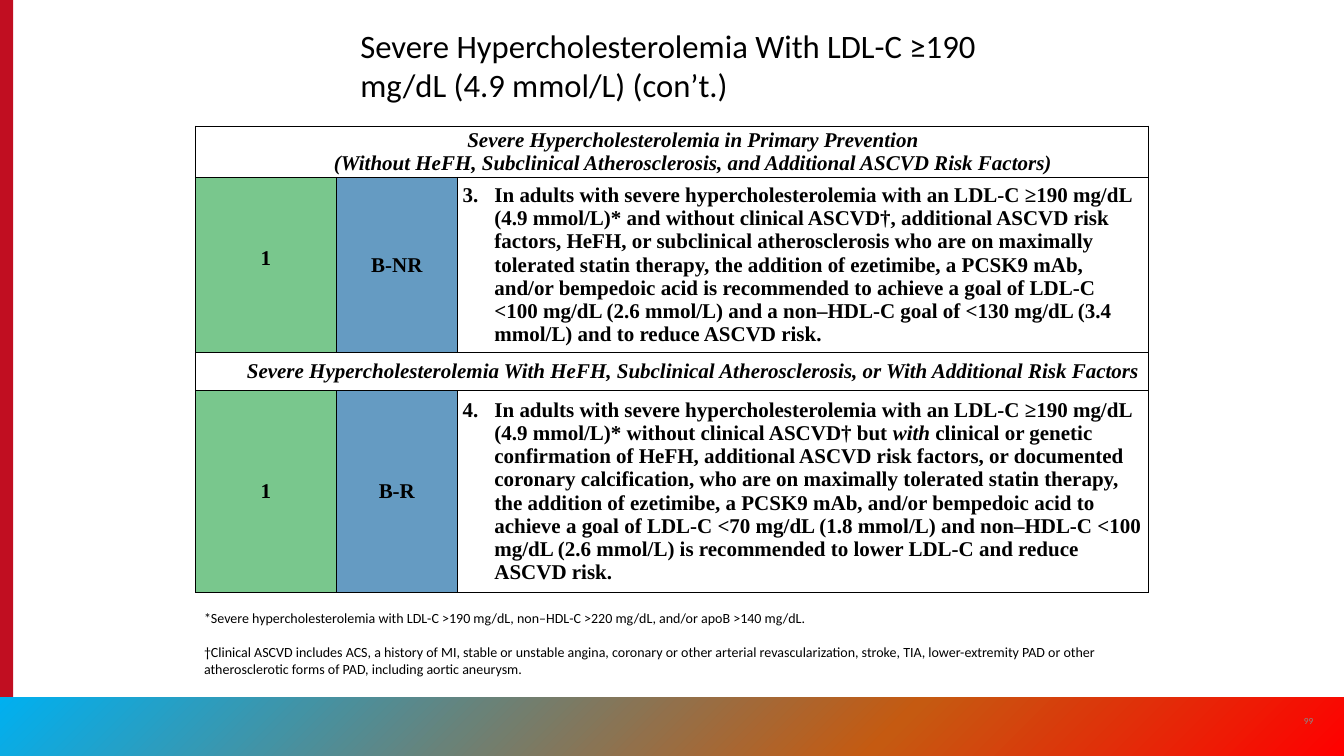
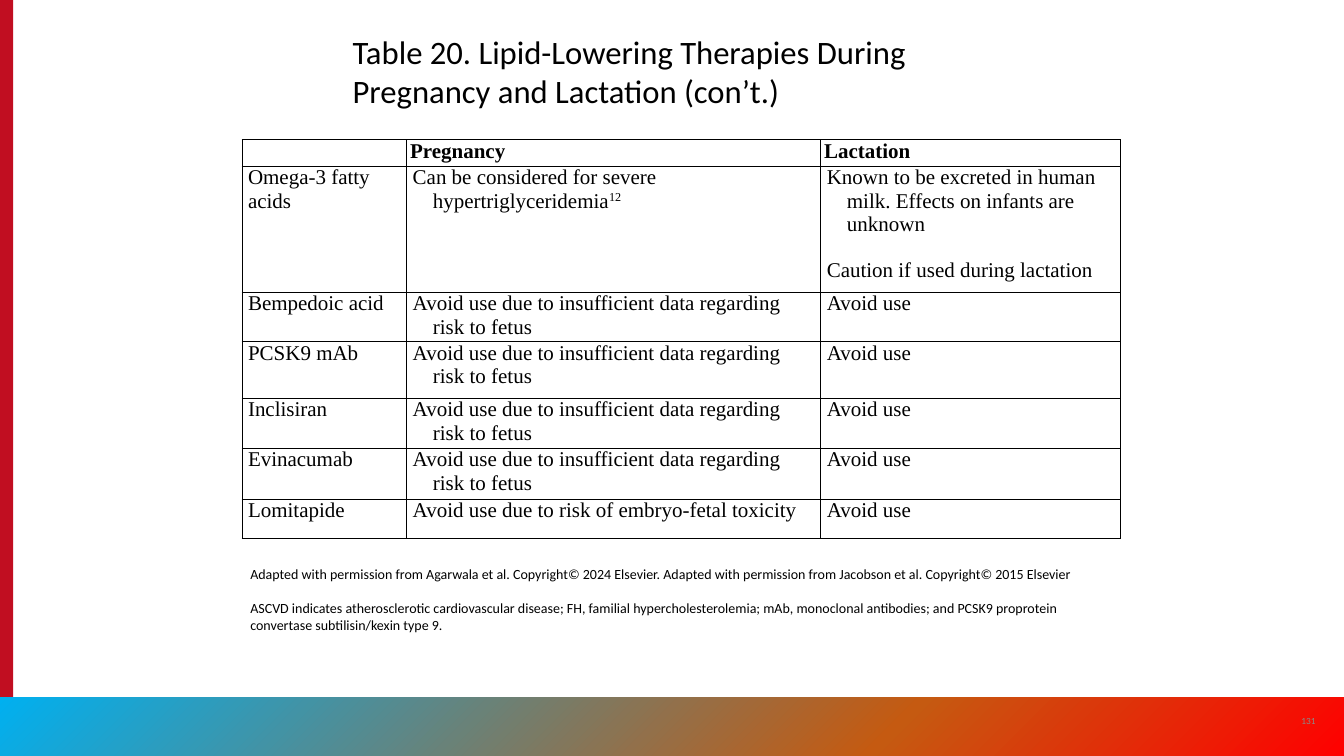
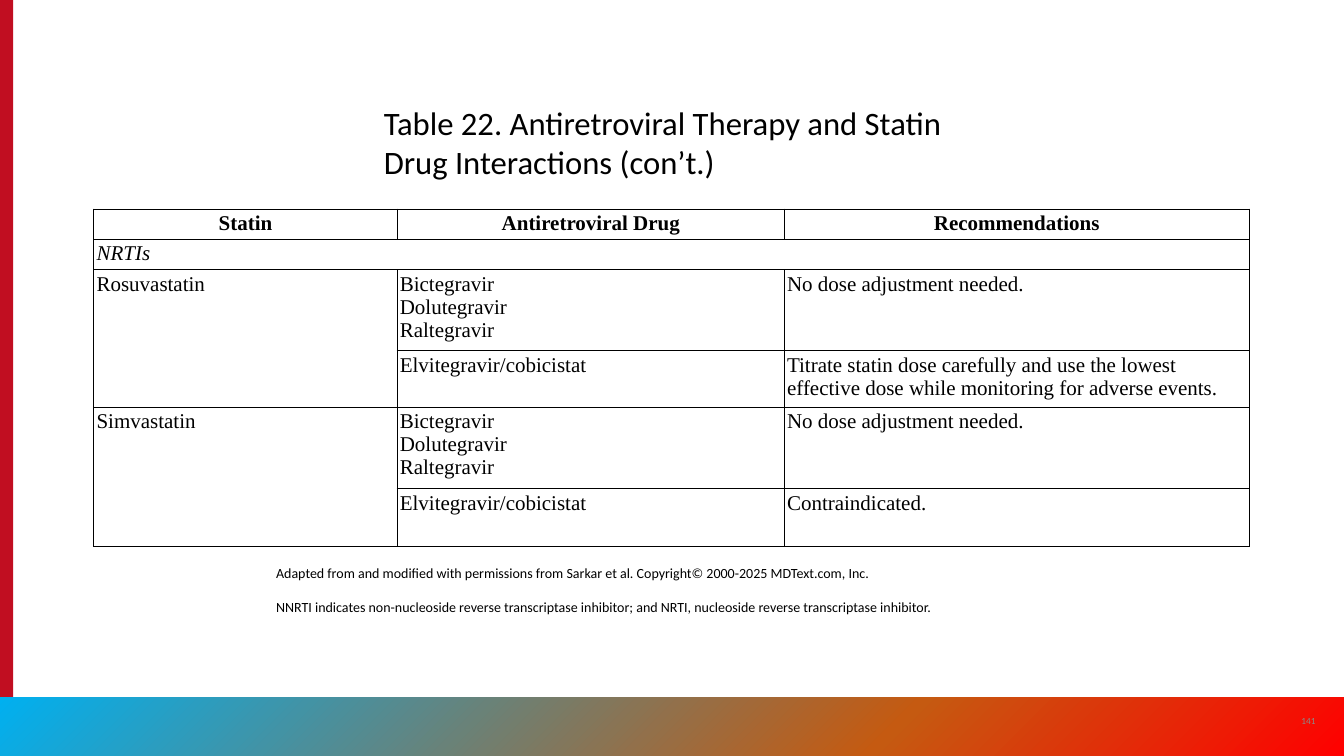
from copy import deepcopy

from pptx import Presentation
from pptx.dml.color import RGBColor
from pptx.enum.shapes import MSO_SHAPE, PP_PLACEHOLDER
from pptx.enum.text import MSO_ANCHOR, MSO_AUTO_SIZE, PP_ALIGN
from pptx.oxml import parse_xml
from pptx.oxml.ns import nsdecls, qn
from pptx.util import Cm, Pt

COLORS = {
    "bar": "C10E21", "blue": "00B0F0", "orange": "C55A11", "red": "FF0000",
    "text": "000000", "number": "8A8B8A", "white": "FFFFFF",
    "strength": "79C78D", "evidence": "659BC2",
}
RGB = {name: RGBColor.from_string(value) for name, value in COLORS.items()}
HANGING = Cm(0.61)

prs = Presentation()
prs.slide_width, prs.slide_height = Cm(40.64), Cm(22.86)
layout = prs.slide_layouts[5]
for ph in list(layout.placeholders):
    if ph.placeholder_format.type != PP_PLACEHOLDER.TITLE:
        ph.element.getparent().remove(ph.element)


def add_page(title, title_box, notes, notes_box, number):
    """Add a slide with its title, footnotes and page number."""
    s = prs.slides.add_slide(layout)
    head = s.shapes.title
    head.left, head.top, head.width, head.height = map(Cm, title_box)
    foot = s.shapes.add_textbox(*map(Cm, notes_box))
    num = s.shapes.add_textbox(Cm(38.96), Cm(21.18), Cm(1.22), Cm(1.22))
    for sp, text, size, color in (
        (head, title, 28, "text"),
        (foot, "\n".join(notes), 12, "text"),
        (num, number, 8, "number"),
    ):
        tf = sp.text_frame
        tf.text = text
        tf.word_wrap = True
        tf.auto_size = MSO_AUTO_SIZE.NONE
        tf.vertical_anchor = MSO_ANCHOR.TOP
        for i, p in enumerate(tf.paragraphs):
            p.alignment = PP_ALIGN.LEFT
            if i:
                p.space_before = Pt(14.6)
            p.font.name, p.font.size = "Calibri", Pt(size)
            p.font.color.rgb = RGB[color]
    num.text_frame.vertical_anchor = MSO_ANCHOR.MIDDLE
    num.text_frame.paragraphs[0].alignment = PP_ALIGN.CENTER
    return s


def add_grid(s, left, top, cols, rows, texts, side, edge=0):
    """Add a black-ruled table; side and edge are cell margins in cm."""
    frame = s.shapes.add_table(len(rows), len(cols), Cm(left), Cm(top),
                               Cm(sum(cols)), Cm(sum(rows)))
    table = frame.table
    table.first_row = table.horz_banding = False
    for col, width in zip(table.columns, cols):
        col.width = Cm(width)
    for row, height, line in zip(table.rows, rows, texts):
        row.height = Cm(height)
        for cell, text in zip(row.cells, line):
            cell.text_frame.text = text
            cell.margin_left = cell.margin_right = Cm(side)
            cell.margin_top = cell.margin_bottom = Cm(edge)
            tcPr = cell._tc.get_or_add_tcPr()
            for tag in ("lnL", "lnR", "lnT", "lnB"):
                tcPr.append(parse_xml(
                    f'<a:{tag} {nsdecls("a")} w="12700"><a:solidFill>'
                    f'<a:srgbClr val="{COLORS["text"]}"/></a:solidFill></a:{tag}>'))
            cell.fill.solid()
            cell.fill.fore_color.rgb = RGB["white"]
            for p in cell.text_frame.paragraphs:
                p.font.name, p.font.size = "Times New Roman", Pt(18)
                p.font.bold = p.font.italic = False
                p.font.color.rgb = RGB["text"]
    return table


# Slide 1: recommendations
s = add_page(
    "Severe Hypercholesterolemia With LDL-C ≥190 mg/dL (4.9 mmol/L) (con’t.)",
    (10.64, 0.64, 19.33, 2.64),
    ["*Severe hypercholesterolemia with LDL-C >190 mg/dL, non–HDL-C >220 mg/dL, "
     "and/or apoB >140 mg/dL.",
     "†Clinical ASCVD includes ACS, a history of MI, stable or unstable angina, "
     "coronary or other arterial revascularization, stroke, TIA, lower-extremity "
     "PAD or other atherosclerotic forms of PAD, including aortic aneurysm."],
    (5.92, 18.31, 28.68, 2.31), "99")

# Bar and band, moved to the layout so that every slide shows them
bar = s.shapes.add_shape(MSO_SHAPE.RECTANGLE, 0, 0, Cm(0.4), prs.slide_height)
bar.fill.solid()
bar.fill.fore_color.rgb = RGB["bar"]
band = s.shapes.add_shape(MSO_SHAPE.RECTANGLE, 0, Cm(21.08),
                          prs.slide_width, Cm(1.78))
band.fill.gradient()
band.fill.gradient_angle = 315
stops = band.element.spPr.find(".//" + qn("a:gsLst"))
stops.insert(1, deepcopy(stops[0]))
for stop, (pos, color) in zip(band.fill.gradient_stops,
                              ((0, "blue"), (0.66, "orange"), (1, "red"))):
    stop.position = pos
    stop.color.rgb = RGB[color]
for sp in (bar, band):
    sp.line.fill.background()
    sp.shadow.inherit = False
    layout.shapes.element.append(sp.element)

table = add_grid(s, 5.92, 3.81, [4.24, 3.68, 20.88], [1.55, 5.31, 1.14, 6.1], [
    ["Severe Hypercholesterolemia in Primary Prevention\n(Without HeFH, "
     "Subclinical Atherosclerosis, and Additional ASCVD Risk Factors)", "", ""],
    ["1", "B-NR",
     "In adults with severe hypercholesterolemia with an LDL-C ≥190 mg/dL "
     "(4.9 mmol/L)* and without clinical ASCVD†, additional ASCVD risk factors, "
     "HeFH, or subclinical atherosclerosis who are on maximally tolerated statin "
     "therapy, the addition of ezetimibe, a PCSK9 mAb, and/or bempedoic acid is "
     "recommended to achieve a goal of LDL-C <100 mg/dL (2.6 mmol/L) and a "
     "non–HDL-C goal of <130 mg/dL (3.4 mmol/L) and to reduce ASCVD risk."],
    ["Severe Hypercholesterolemia With HeFH, Subclinical Atherosclerosis, "
     "or With Additional Risk Factors", "", ""],
    ["1", "B-R",
     "In adults with severe hypercholesterolemia with an LDL-C ≥190 mg/dL "
     "(4.9 mmol/L)* without clinical ASCVD† but "],
], side=0.15)
for cell in table.iter_cells():
    cell.vertical_anchor = MSO_ANCHOR.MIDDLE
    for p in cell.text_frame.paragraphs:
        p.font.bold = True
        p.alignment = PP_ALIGN.CENTER
for row in (0, 2):
    table.cell(row, 0).merge(table.cell(row, 2))
    for p in table.cell(row, 0).text_frame.paragraphs:
        p.font.italic = True
        p._p.get_or_add_pPr().set("marL", str(Cm(1.27)))
for row, start in ((1, 3), (3, 4)):
    for col, color in enumerate(("strength", "evidence")):
        table.cell(row, col).fill.fore_color.rgb = RGB[color]
    p = table.cell(row, 2).text_frame.paragraphs[0]
    p.alignment = PP_ALIGN.LEFT
    pPr = p._p.get_or_add_pPr()
    pPr.set("marL", str(Cm(0.96)))
    pPr.set("indent", str(-Cm(0.96)))
    pPr.insert(0, parse_xml(f'<a:buAutoNum {nsdecls("a")} type="arabicPeriod" '
                            f'startAt="{start}"/>'))
table.cell(1, 0).margin_bottom = Cm(0.4)
r = p.add_run()
r.text = "with"
r.font.italic = True
p.add_run().text = (
    " clinical or genetic confirmation of HeFH, additional ASCVD risk factors, or "
    "documented coronary calcification, who are on maximally tolerated statin "
    "therapy, the addition of ezetimibe, a PCSK9 mAb, and/or bempedoic acid to "
    "achieve a goal of LDL-C <70 mg/dL (1.8 mmol/L) and non–HDL-C <100 mg/dL "
    "(2.6 mmol/L) is recommended to lower LDL-C and reduce ASCVD risk.")

# Slide 2: pregnancy and lactation
s = add_page(
    "Table 20. Lipid-Lowering Therapies During Pregnancy and Lactation (con’t.)",
    (10.41, 0.84, 19.81, 2.64),
    ["Adapted with permission from Agarwala et al. Copyright© 2024 Elsevier. "
     "Adapted with permission from Jacobson et al. Copyright© 2015 Elsevier",
     "ASCVD indicates atherosclerotic cardiovascular disease; FH, familial "
     "hypercholesterolemia; mAb, monoclonal antibodies; and PCSK9 proprotein "
     "convertase subtilisin/kexin type 9."],
    (7.32, 16.99, 26.57, 2.82), "131")
no_data = "Avoid use due to insufficient data regarding risk to fetus"
table = add_grid(
    s, 7.32, 4.22, [4.98, 12.52, 9.07],
    [0.8, 3.81, 1.51, 1.7, 1.51, 1.54, 1.18], [
        ["", "Pregnancy", "Lactation"],
        ["Omega-3 fatty acids",
         "Can be considered for severe hypertriglyceridemia",
         "Known to be excreted in human milk. Effects on infants are unknown\n"
         "Caution if used during lactation"],
        *([drug, no_data, "Avoid use"] for drug in
          ("Bempedoic acid", "PCSK9 mAb", "Inclisiran", "Evinacumab")),
        ["Lomitapide", "Avoid use due to risk of embryo-fetal toxicity",
         "Avoid use"],
    ], side=0.18)
for row in table.rows:
    for cell in list(row.cells)[1:]:
        for p in cell.text_frame.paragraphs:
            pPr = p._p.get_or_add_pPr()
            pPr.set("marL", str(HANGING))
            pPr.set("indent", str(-HANGING))
for cell in table.rows[0].cells:
    cell.margin_left = cell.margin_right = Cm(0.1)
    cell.text_frame.paragraphs[0].font.bold = True
table.cell(1, 2).text_frame.paragraphs[1].space_before = Pt(20)
r = table.cell(1, 1).text_frame.paragraphs[0].add_run()
r.text = "12"
r._r.get_or_add_rPr().set("baseline", "30000")

# Slide 3: antiretroviral interactions
s = add_page(
    "Table 22. Antiretroviral Therapy and Statin Drug Interactions (con’t.)",
    (11.35, 2.97, 17.96, 2.64),
    ["Adapted from and modified with permissions from Sarkar et al. "
     "Copyright© 2000-2025 MDText.com, Inc.",
     "NNRTI indicates non-nucleoside reverse transcriptase inhibitor; and NRTI, "
     "nucleoside reverse transcriptase inhibitor."],
    (8.1, 16.94, 24.43, 1.8), "141")
inhibitors = "Bictegravir\nDolutegravir\nRaltegravir"
boosted = "Elvitegravir/cobicistat"
no_change = "No dose adjustment needed."
table = add_grid(
    s, 2.84, 6.32, [9.17, 11.71, 14.05], [0.92, 0.92, 2.45, 1.7, 2.47, 1.73], [
        ["Statin", "Antiretroviral Drug", "Recommendations"],
        ["NRTIs", "", ""],
        ["Rosuvastatin", inhibitors, no_change],
        ["", boosted, "Titrate statin dose carefully and use the lowest effective "
                      "dose while monitoring for adverse events."],
        ["Simvastatin", inhibitors, no_change],
        ["", boosted, "Contraindicated."],
    ], side=0.08, edge=0.08)
for cell in table.rows[0].cells:
    p = cell.text_frame.paragraphs[0]
    p.alignment = PP_ALIGN.CENTER
    p.font.bold = True
table.cell(1, 0).merge(table.cell(1, 2))
table.cell(1, 0).text_frame.paragraphs[0].font.italic = True
for row in (2, 4):
    table.cell(row, 0).merge(table.cell(row + 1, 0))

prs.save("out.pptx")
